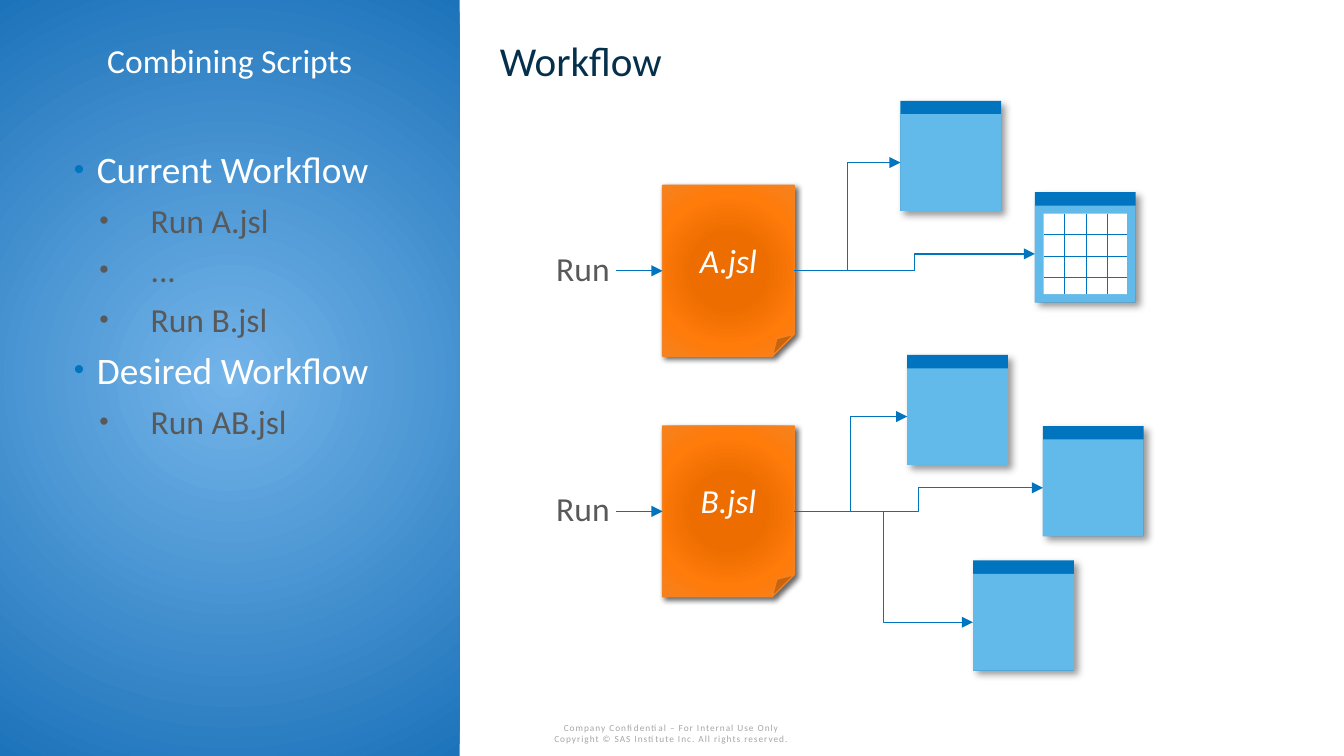
"""Build the Combining Scripts workflow slide."""
from lxml import etree
from pptx import Presentation
from pptx import util as u
from pptx.dml.color import RGBColor
from pptx.enum import dml, shapes, text
from pptx.oxml import parse_xml
from pptx.oxml.ns import nsdecls, qn

WHITE = RGBColor(0xFF, 0xFF, 0xFF)
NAVY = RGBColor(0x04, 0x30, 0x4B)
BLUE = RGBColor(0x00, 0x74, 0xBE)
SKY = RGBColor(0x61, 0xBA, 0xE9)
GRAY = RGBColor(0x59, 0x59, 0x59)
PALE = RGBColor(0xA6, 0xA6, 0xA6)
ORANGE = RGBColor(0xF5, 0x82, 0x20)
PANEL_STOPS = [(0, RGBColor(0x73, 0xB4, 0xE9)), (100, RGBColor(0x1D, 0x73, 0xBA))]
SCRIPT_STOPS = [(0, RGBColor(0xED, 0x6D, 0x00)), (34, RGBColor(0xED, 0x6D, 0x00)),
                (70, RGBColor(0xFF, 0x7B, 0x0A)), (100, ORANGE)]

TITLE, SUBTITLE = "Combining Scripts", "Workflow"
STEPS = [(0, "Current Workflow"), (1, "Run A.jsl"), (1, "..."), (1, "Run B.jsl"),
         (0, "Desired Workflow"), (1, "Run AB.jsl")]
LEVELS = [(0.17, 20, WHITE, BLUE), (0.57, 18, GRAY, GRAY)]
FOOTER = ["Company Confidential – For Internal Use Only",
          "Copyright © SAS Institute Inc. All rights reserved."]
SCRIPTS = [
    ("A.jsl", 1.38, [(6.7, 0.75, False), (7.7, 1.43, True)]),
    ("B.jsl", 3.17, [(6.75, 2.64, False), (7.76, 3.17, False), (7.24, 4.17, False)]),
]
SLIDE_W = 10
SLIDE_H = SLIDE_W * 9 / 16
PANEL_W = 3.42
SCRIPT_X, SCRIPT_W, SCRIPT_H = 4.93, 0.98, 1.27
WIN_W, WIN_H, BAR_H = 0.75, 0.82, 0.1
GRID_W, GRID_H = 0.62, 0.6


def box(*lengths):
    return [u.Inches(n) for n in lengths]


def place(sp, *lengths):
    sp.left, sp.top, sp.width, sp.height = box(*lengths)


def style(p, size, color, align=None):
    p.alignment = align
    for r in p.runs:
        r.font.name, r.font.size = "Calibri", u.Pt(size)
        r.font.color.rgb = color


def add_box(parent, kind, color, *lengths):
    sp = parent.add_shape(kind, *box(*lengths))
    sp.shadow.inherit = False
    sp.fill.solid()
    sp.fill.fore_color.rgb = color
    sp.line.fill.background()
    return sp


def radial(sp, stops, center):
    gs = "".join(f'<a:gs pos="{pos * 1000}"><a:srgbClr val="{c}"/></a:gs>' for pos, c in stops)
    edges = " ".join(f'{side}="{center * 1000}"' for side in "ltrb")
    grad = parse_xml(f'<a:gradFill {nsdecls("a")} rotWithShape="1"><a:gsLst>{gs}</a:gsLst>'
                     f'<a:path path="circle"><a:fillToRect {edges}/></a:path></a:gradFill>')
    pr = sp._element.spPr
    pr.replace(pr.find(qn("a:solidFill")), grad)


def drop_shadow(sp, alpha, blur, dist):
    effects = sp._element.spPr.find(qn("a:effectLst"))
    effects.append(parse_xml(
        f'<a:outerShdw {nsdecls("a")} blurRad="{u.Pt(blur)}" dist="{u.Pt(dist)}" dir="2700000" '
        f'algn="tl" rotWithShape="0"><a:srgbClr val="000000"><a:alpha val="{alpha * 1000}"/>'
        '</a:srgbClr></a:outerShdw>'))


def bullet(p, margin, hanging, color):
    pPr = p._p.get_or_add_pPr()
    pPr.set("marL", str(u.Inches(margin)))
    pPr.set("indent", str(u.Inches(hanging)))
    if color is None:
        etree.SubElement(pPr, qn("a:buNone"))
        return
    clr = etree.SubElement(pPr, qn("a:buClr"))
    etree.SubElement(clr, qn("a:srgbClr"), val=str(color))
    etree.SubElement(pPr, qn("a:buSzPct"), val="80000")
    etree.SubElement(pPr, qn("a:buFont"), typeface="Arial")
    etree.SubElement(pPr, qn("a:buChar"), char="•")


def add_arrow(s, kind, target, source=None, start=(0, 0)):
    cx = s.shapes.add_connector(kind, *box(*start, *start))
    if source is not None:
        cx.begin_connect(source, 3)
    cx.end_connect(target, 1)
    cx.line.color.rgb, cx.line.width = BLUE, u.Pt(0.75)
    etree.SubElement(cx.line._get_or_add_ln(), qn("a:tailEnd"), type="triangle")
    etree.SubElement(cx._element.spPr, qn("a:effectLst"))


def add_window(s, x, y, has_table):
    g = s.shapes.add_group_shape().shapes
    rect = shapes.MSO_SHAPE.RECTANGLE
    drop_shadow(add_box(g, rect, BLUE, x, y, WIN_W, WIN_H), 40, 4, 3)
    pane_h = WIN_H - BAR_H
    pane = add_box(g, rect, SKY, x, y + BAR_H, WIN_W, pane_h)
    if has_table:
        grid = add_box(g, rect, WHITE, x + (WIN_W - GRID_W) / 2,
                       y + BAR_H + (pane_h - GRID_H) / 2, GRID_W, GRID_H)
        grid.fill.patterned()
        grid.fill.pattern = dml.MSO_PATTERN.DOTTED_GRID
        grid.fill.fore_color.rgb, grid.fill.back_color.rgb = BLUE, WHITE
    return pane


def add_script(s, name, y):
    sp = add_box(s.shapes, shapes.MSO_SHAPE.FOLDED_CORNER, ORANGE, SCRIPT_X, y, SCRIPT_W, SCRIPT_H)
    radial(sp, SCRIPT_STOPS, 100)
    drop_shadow(sp, 60, 3, 2)
    sp.line.color.rgb, sp.line.width = ORANGE, u.Pt(0.75)
    tf = sp.text_frame
    tf.text, tf.vertical_anchor = name, text.MSO_ANCHOR.MIDDLE
    style(tf.paragraphs[0], 18, WHITE, text.PP_ALIGN.CENTER)
    tf.paragraphs[0].runs[0].font.italic = True
    return sp


def add_run_label(s, mid):
    tf = s.shapes.add_textbox(*box(4.04, mid - 0.22, 0.6, 0.4)).text_frame
    tf.text, tf.word_wrap = "Run", False
    style(tf.paragraphs[0], 18, GRAY)


def add_frame(s):
    panel = add_box(s.shapes, shapes.MSO_SHAPE.RECTANGLE, BLUE, 0, 0, PANEL_W, SLIDE_H)
    radial(panel, PANEL_STOPS, 50)
    s.shapes._spTree.insert(2, panel._element)
    tf = s.shapes.add_textbox(*box(3.62, 5.32, 2.75, 0.27)).text_frame
    tf.text, tf.word_wrap = "\n".join(FOOTER), True
    tf.vertical_anchor = text.MSO_ANCHOR.BOTTOM
    for p in tf.paragraphs:
        style(p, 5, PALE, text.PP_ALIGN.CENTER)
        p.runs[0].font._element.set("spc", "50")


def fill_placeholders(s):
    title, heading, steps = s.placeholders
    place(title, 0, 0.25, PANEL_W, 0.4)
    title.text_frame.text = TITLE
    title.text_frame.vertical_anchor = text.MSO_ANCHOR.TOP
    style(title.text_frame.paragraphs[0], 18, WHITE, text.PP_ALIGN.CENTER)

    place(heading, PANEL_W, 0.21, SLIDE_W - PANEL_W, 0.47)
    tf = heading.text_frame
    tf.text, tf.vertical_anchor = SUBTITLE, text.MSO_ANCHOR.MIDDLE
    tf.margin_left = tf.margin_right = u.Inches(0.3)
    p = tf.paragraphs[0]
    p.space_before = u.Pt(0)
    bullet(p, 0, 0, None)
    style(p, 22, NAVY)

    place(steps, 0.45, 1.09, 2.67, 2.27)
    tf = steps.text_frame
    tf.text = "\n".join(label for _, label in STEPS)
    for i, (p, (level, _)) in enumerate(zip(tf.paragraphs, STEPS)):
        margin, size, color, dot = LEVELS[level]
        p.level, p.line_spacing = level, 0.85
        p.space_before = u.Pt(8 if i else 0)
        bullet(p, margin, -0.38, dot)
        style(p, size, color)
    for sp in (title, heading, steps):
        sp.text_frame.auto_size = text.MSO_AUTO_SIZE.NONE


def main():
    prs = Presentation()
    prs.slide_width, prs.slide_height = box(SLIDE_W, SLIDE_H)
    s = prs.slides.add_slide(prs.slide_layouts[3])
    add_frame(s)
    fill_placeholders(s)
    for name, y, windows in SCRIPTS:
        mid = y + SCRIPT_H / 2
        script = add_script(s, name, y)
        add_run_label(s, mid)
        add_arrow(s, shapes.MSO_CONNECTOR.STRAIGHT, script, start=(4.58, mid))
        panes = [add_window(s, *window) for window in windows]
        for pane in panes:
            add_arrow(s, shapes.MSO_CONNECTOR.ELBOW, pane, source=script)
    prs.save("out.pptx")


if __name__ == "__main__":
    main()
